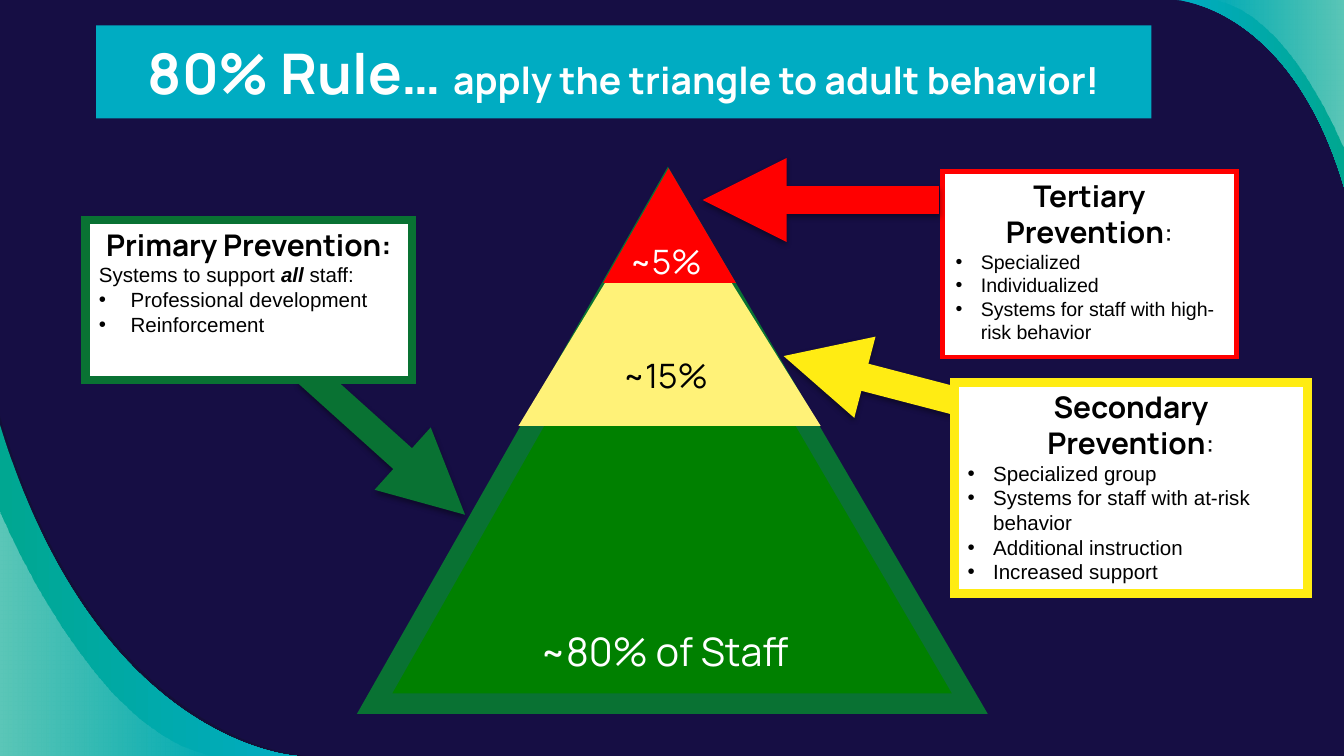
from lxml import etree
from pptx import Presentation
from pptx import util as u
from pptx.dml.color import RGBColor
from pptx.enum import shapes, text
from pptx.oxml import parse_xml
from pptx.oxml.ns import nsdecls, qn

NAVY = RGBColor(0x16, 0x0E, 0x44)
SHADE = RGBColor(0x12, 0x10, 0x2F)
TEAL = RGBColor(0x00, 0xAC, 0xC2)
SEA = RGBColor(0x00, 0xA7, 0x91)
WHITE = RGBColor(0xFF, 0xFF, 0xFF)
BLACK = RGBColor(0x00, 0x00, 0x00)
FOREST = RGBColor(0x09, 0x72, 0x33)
GREEN = RGBColor(0x00, 0x80, 0x00)
YELLOW = RGBColor(0xFF, 0xEC, 0x13)
CREAM = RGBColor(0xFF, 0xF2, 0x78)
RED = RGBColor(0xFF, 0x00, 0x00)
HEADING, BODY = "Manrope", "Arial"


def cm(*lengths):
    return [u.Cm(length) for length in lengths]


def set_alpha(fill_element, percents):
    """Set the opacity of each colour in a fill, in order."""
    for color, percent in zip(fill_element.iter(qn("a:srgbClr")), percents):
        etree.SubElement(color, qn("a:alpha")).set("val", str(percent * 1000))


def add_text(paragraph, words, font=BODY, size=11, color=BLACK, bold=False, italic=False):
    run = paragraph.add_run()
    run.text = words
    run.font.name = font
    run.font.size = u.Pt(size)
    run.font.color.rgb = color
    run.font.bold = bold
    run.font.italic = italic


def add_bullet(paragraph, indent):
    props = paragraph._p.get_or_add_pPr()
    props.set("marL", str(u.Cm(indent)))
    props.set("indent", str(-u.Cm(indent)))
    props.append(parse_xml(f'<a:buFont {nsdecls("a")} typeface="Arial"/>'))
    props.append(parse_xml(f'<a:buChar {nsdecls("a")} char="•"/>'))


def add_block(slide, kind, box, fill, border=None, border_width=0):
    block = slide.shapes.add_shape(kind, *cm(*box))
    block.shadow.inherit = False
    block.fill.solid()
    block.fill.fore_color.rgb = fill
    if border is None:
        block.line.fill.background()
    else:
        block.line.color.rgb = border
        block.line.width = u.Pt(border_width)
        etree.SubElement(block.line._ln, qn("a:miter")).set("lim", "800000")
    block.text_frame.word_wrap = True
    return block


def add_corner(slide, box, curve, corner, colors, alphas=()):
    """Fill between a cubic curve and a slide corner, in fractions of the box."""
    left, top, width, height = cm(*box)
    start, *rest = [(round(left + x * width), round(top + y * height))
                    for x, y in (*curve, corner)]
    builder = slide.shapes.build_freeform(*start)
    builder.add_line_segments(rest, close=True)
    swoosh = builder.convert_to_shape()
    # Join the first three points into one cubic segment
    segments = list(swoosh._element.iter(qn("a:lnTo")))[:3]
    cubic = etree.Element(qn("a:cubicBezTo"))
    segments[0].addprevious(cubic)
    for segment in segments:
        cubic.append(segment[0])
        segment.getparent().remove(segment)

    swoosh.shadow.inherit = False
    swoosh.line.fill.background()
    if len(colors) == 1:
        swoosh.fill.solid()
        swoosh.fill.fore_color.rgb = colors[0]
    else:
        swoosh.fill.gradient()
        swoosh.fill.gradient_angle = 0
        for stop, color, position in zip(swoosh.fill.gradient_stops, colors, (0, 1)):
            stop.color.rgb = color
            stop.position = position
    set_alpha(swoosh._element.spPr, alphas)


def add_corners(slide):
    # Bottom left
    corner = (0, 1)
    add_corner(slide, (0, 7.87, 5.77, 6.42), [(0, 0), (0.32, 0.97), (1, 1), (1, 1)],
               corner, [SHADE], [54])
    add_corner(slide, (0, 8.03, 5.61, 6.26), [(0, 0), (0.33, 0.97), (1, 1), (1, 1)],
               corner, [SEA, TEAL])
    add_corner(slide, (0, 9.65, 4.11, 4.64), [(0, 0), (0, 0), (0.43, 0.94), (1, 1)],
               corner, [WHITE, WHITE], [36, 0])
    # Top right
    corner = (1, 0)
    add_corner(slide, (22.23, 0, 3.17, 3.53), [(0, 0), (0, 0), (0.68, 0.03), (1, 1)],
               corner, [TEAL, SEA])
    add_corner(slide, (22.89, 0, 2.51, 2.84), [(0, 0), (0.58, 0.06), (1, 1), (1, 1)],
               corner, [WHITE, WHITE], [0, 36])


def add_arrow(slide, start, end, color):
    arrow = slide.shapes.add_connector(shapes.MSO_CONNECTOR.STRAIGHT, *cm(*start, *end))
    arrow.line.color.rgb = color
    arrow.line.width = u.Pt(15)
    etree.SubElement(arrow.line._ln, qn("a:tailEnd")).set("type", "triangle")
    arrow._element.spPr.append(parse_xml(
        f'<a:effectLst {nsdecls("a")}><a:outerShdw blurRad="{u.Pt(3.1)}" dist="{u.Pt(1.6)}" '
        'dir="5400000" rotWithShape="0"><a:srgbClr val="000000"><a:alpha val="38000"/>'
        '</a:srgbClr></a:outerShdw></a:effectLst>'))


def add_prevention(slide, box, color, border_width, heading, items,
                   intro=(), colon_bold=False, size=11, indent=0.48):
    card = add_block(slide, shapes.MSO_SHAPE.RECTANGLE, box, WHITE, color, border_width)
    frame = card.text_frame
    frame.vertical_anchor = text.MSO_ANCHOR.TOP
    title = frame.paragraphs[0]
    title.alignment = text.PP_ALIGN.CENTER
    add_text(title, heading, font=HEADING, size=16, bold=True)
    add_text(title, ":", font=HEADING, size=16, bold=colon_bold)
    if intro:
        lead = frame.add_paragraph()
        lead.alignment = text.PP_ALIGN.LEFT
        for words, strong in intro:
            add_text(lead, words, size=size, bold=strong, italic=strong)
    for item in items:
        line = frame.add_paragraph()
        line.alignment = text.PP_ALIGN.LEFT
        add_bullet(line, indent)
        add_text(line, item, size=size)


def add_pyramid(slide, box):
    left, top, width, _ = box
    # Tiers: offset from the box, size, fill, border
    tiers = [
        ((0, 0.36, width, 9.76), GREEN, FOREST, 11),
        ((2.72, 0.22, 5.71, 4.65), CREAM, None, 0),
        ((4.32, 0, 2.51, 2.17), RED, None, 0),
    ]
    for (x, y, w, h), fill, border, border_width in tiers:
        tier = add_block(slide, shapes.MSO_SHAPE.ISOSCELES_TRIANGLE,
                         (left + x, top + y, w, h), fill, border, border_width)
        tier.adjustments[0] = 0.493
    # Shares of staff
    shares = [
        ((1.97, 8.56, 7.01, 1.14), "~80% of Staff", 21, WHITE),
        ((4.43, 3.4, 2.26, 1.02), "~15% ", 18, BLACK),
        ((4.46, 1.25, 2.21, 1.02), "~5% ", 18, WHITE),
    ]
    for (x, y, w, h), words, size, color in shares:
        label = slide.shapes.add_textbox(*cm(left + x, top + y, w, h))
        label.text_frame.word_wrap = True
        share = label.text_frame.paragraphs[0]
        share.alignment = text.PP_ALIGN.CENTER
        add_text(share, words, font=HEADING, size=size, color=color)


def add_title(slide, box):
    banner = add_block(slide, shapes.MSO_SHAPE.RECTANGLE, box, TEAL)
    banner.text_frame.vertical_anchor = text.MSO_ANCHOR.MIDDLE
    title = banner.text_frame.paragraphs[0]
    title.alignment = text.PP_ALIGN.CENTER
    for words, size in (("80% Rule… ", 30), ("apply the triangle to adult behavior!", 20)):
        add_text(title, words, font=HEADING, size=size, color=WHITE, bold=True)


def main():
    deck = Presentation()
    deck.slide_width, deck.slide_height = cm(25.4, 14.29)
    slide = deck.slides.add_slide(deck.slide_layouts[6])
    slide.background.fill.solid()
    slide.background.fill.fore_color.rgb = NAVY
    add_corners(slide)

    # Arrows lie under the cards they start from, except the red one
    add_arrow(slide, (5.8, 7.04), (8.79, 9.73), FOREST)
    add_prevention(slide, (1.62, 4.16, 6.17, 3.03), FOREST, 4.5, "Primary Prevention",
                   ["Professional development", "Reinforcement"],
                   intro=[("Systems to support ", False), ("all", True), (" staff:", False)],
                   colon_bold=True, indent=0.6)
    add_arrow(slide, (18.03, 7.57), (14.81, 6.73), YELLOW)
    add_prevention(slide, (18.04, 7.23, 6.67, 3.99), YELLOW, 5, "Secondary Prevention",
                   ["Specialized group", "Systems for staff with at-risk behavior",
                    "Additional instruction", "Increased support"])
    add_prevention(slide, (17.81, 3.24, 5.56, 3.51), RED, 2.5, "Tertiary Prevention",
                   ["Specialized", "Individualized",
                    "Systems for staff with high-risk behavior"], size=10.5)
    add_arrow(slide, (17.75, 3.78), (13.28, 3.78), RED)

    add_pyramid(slide, (7.08, 3.18, 11.25, 10.12))
    add_title(slide, (1.82, 0.48, 19.94, 1.76))
    deck.save("out.pptx")


if __name__ == "__main__":
    main()
